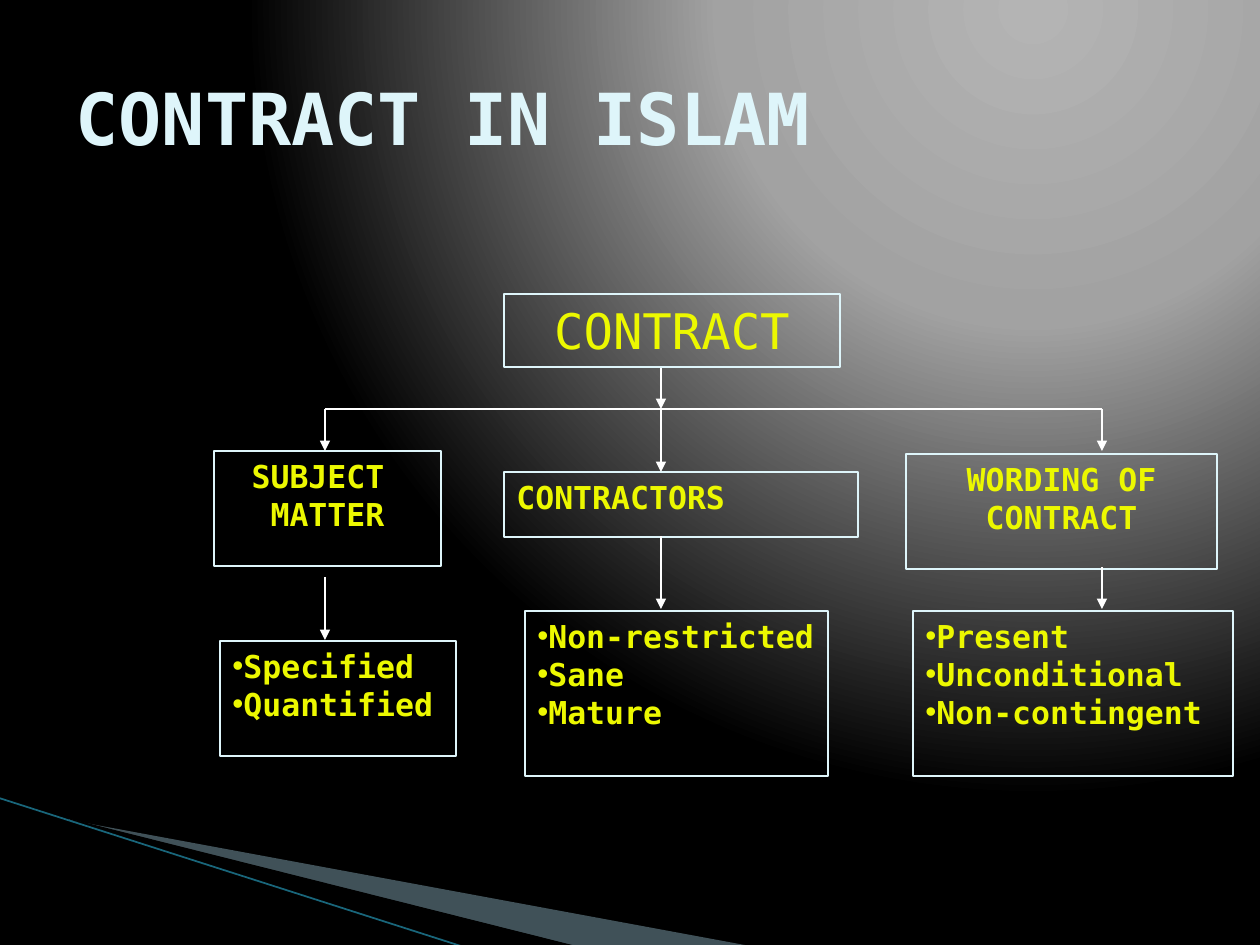
from pptx import Presentation, util as u
from pptx.dml.color import RGBColor
from pptx.enum import shapes, text
from pptx.oxml import parse_xml
from pptx.oxml.ns import qn
from lxml import etree

NS = 'xmlns:a="http://schemas.openxmlformats.org/drawingml/2006/main"'
FONT = "DejaVu Sans Mono"
HEX = {"pale": "DEF5FA", "lime": "ECF800", "white": "FFFFFF",
       "black": "000000", "wedge": "A0CBDC", "teal": "19667B"}
GLOW = [(0, "B4B4B4"), (40, "A2A2A2"), (100, "000000")]
MID = text.PP_ALIGN.CENTER
LEFT = text.PP_ALIGN.LEFT


def px(n):
    return u.Emu(round(n * 914400 / 126))


def color(name):
    return RGBColor.from_string(HEX[name])


def paint(slide):
    """Radial glow from the upper right."""
    slide.background.fill.gradient()
    old = slide.element.find(".//" + qn("a:gradFill"))
    stops = "".join(f'<a:gs pos="{pos * 1000}"><a:srgbClr val="{val}"/></a:gs>'
                    for pos, val in GLOW)
    new = parse_xml(
        f'<a:gradFill {NS} rotWithShape="1"><a:gsLst>{stops}</a:gsLst>'
        '<a:path path="circle"><a:fillToRect l="65000" t="0" r="0" b="98000"/>'
        '</a:path></a:gradFill>')
    old.getparent().replace(old, new)


def write(frame, lines, size=18, tint="lime", bold=True, align=LEFT,
          anchor=text.MSO_ANCHOR.TOP, bullet=False):
    frame.word_wrap = True
    frame.auto_size = text.MSO_AUTO_SIZE.NONE
    frame.vertical_anchor = anchor
    if bullet:
        frame.margin_right = 0
    for i, line in enumerate(lines):
        para = frame.add_paragraph() if i else frame.paragraphs[0]
        para.alignment = align
        if bullet:
            props = para._p.get_or_add_pPr()
            etree.SubElement(props, qn("a:buFont"), typeface="Arial")
            etree.SubElement(props, qn("a:buChar"), char="•")
        run = para.add_run()
        run.text = line
        font = run.font
        font.name, font.size, font.bold = FONT, u.Pt(size), bold
        font.color.rgb = color(tint)


def box(slide, at, lines, **form):
    rect = slide.shapes.add_shape(shapes.MSO_SHAPE.RECTANGLE, *map(px, at))
    rect.shadow.inherit = False
    rect.fill.background()
    rect.line.color.rgb = color("pale")
    rect.line.width = u.Pt(1)
    write(rect.text_frame, lines, **form)


def link(slide, start, end, tint="white", arrow=True):
    line = slide.shapes.add_connector(
        shapes.MSO_CONNECTOR.STRAIGHT, *map(px, start + end))
    line.line.color.rgb = color(tint)
    line.line.width = u.Pt(1)
    if arrow:
        etree.SubElement(line.line._get_or_add_ln(), qn("a:tailEnd"),
                         type="triangle")
    etree.SubElement(line._element.spPr, qn("a:effectLst"))


def wedge(slide, points, tint, alpha=100):
    first, *rest = [tuple(map(px, point)) for point in points]
    pen = slide.shapes.build_freeform(*first)
    pen.add_line_segments(rest)
    form = pen.convert_to_shape()
    form.shadow.inherit = False
    form.line.fill.background()
    form.fill.solid()
    form.fill.fore_color.rgb = color(tint)
    if alpha < 100:
        tone = form._element.spPr.find(".//" + qn("a:srgbClr"))
        etree.SubElement(tone, qn("a:alpha"), val=str(alpha * 1000))


def main():
    deck = Presentation()
    deck.slide_width, deck.slide_height = px(1260), px(945)
    slide = deck.slides.add_slide(deck.slide_layouts[5])
    paint(slide)

    # Corner decoration
    wedge(slide, [(69, 820), (750, 946), (575, 946), (69, 819)], "wedge", 40)
    wedge(slide, [(67, 818), (576, 946), (469, 948), (68, 819)], "black")
    link(slide, (-1, 798), (467, 948), tint="teal", arrow=False)

    # Title
    title = slide.shapes.title
    title.left, title.top, title.width, title.height = map(
        px, (63, 38, 1134, 157))
    write(title.text_frame, ["CONTRACT IN ISLAM"], size=41, tint="pale",
          anchor=text.MSO_ANCHOR.MIDDLE)

    # Root and its three elements
    box(slide, (504, 294, 336, 73), ["CONTRACT"], size=28, bold=False,
        align=MID)
    box(slide, (214, 451, 227, 115), ["SUBJECT ", "MATTER"], align=MID)
    box(slide, (504, 472, 354, 65), ["CONTRACTORS"])
    box(slide, (906, 454, 311, 115), ["WORDING OF", "CONTRACT"], align=MID)

    # Conditions of each element
    for at, lines in [
        ((220, 641, 236, 115), ["Specified", "Quantified"]),
        ((525, 611, 303, 165), ["Non-restricted", "Sane", "Mature"]),
        ((913, 611, 320, 165), ["Present", "Unconditional", "Non-contingent"]),
    ]:
        box(slide, at, lines, bullet=True)

    # Branches: x, arrow tip above the element, then the arrow below it
    bar, stem = 409, 661
    link(slide, (325, bar), (1102, bar), arrow=False)
    link(slide, (stem, 368), (stem, bar))
    for x, tip, low, end in [(325, 451, 577, 640), (stem, 472, 536, 609),
                             (1102, 451, 567, 609)]:
        link(slide, (x, bar), (x, tip))
        link(slide, (x, low), (x, end))

    deck.save("out.pptx")


if __name__ == "__main__":
    main()
